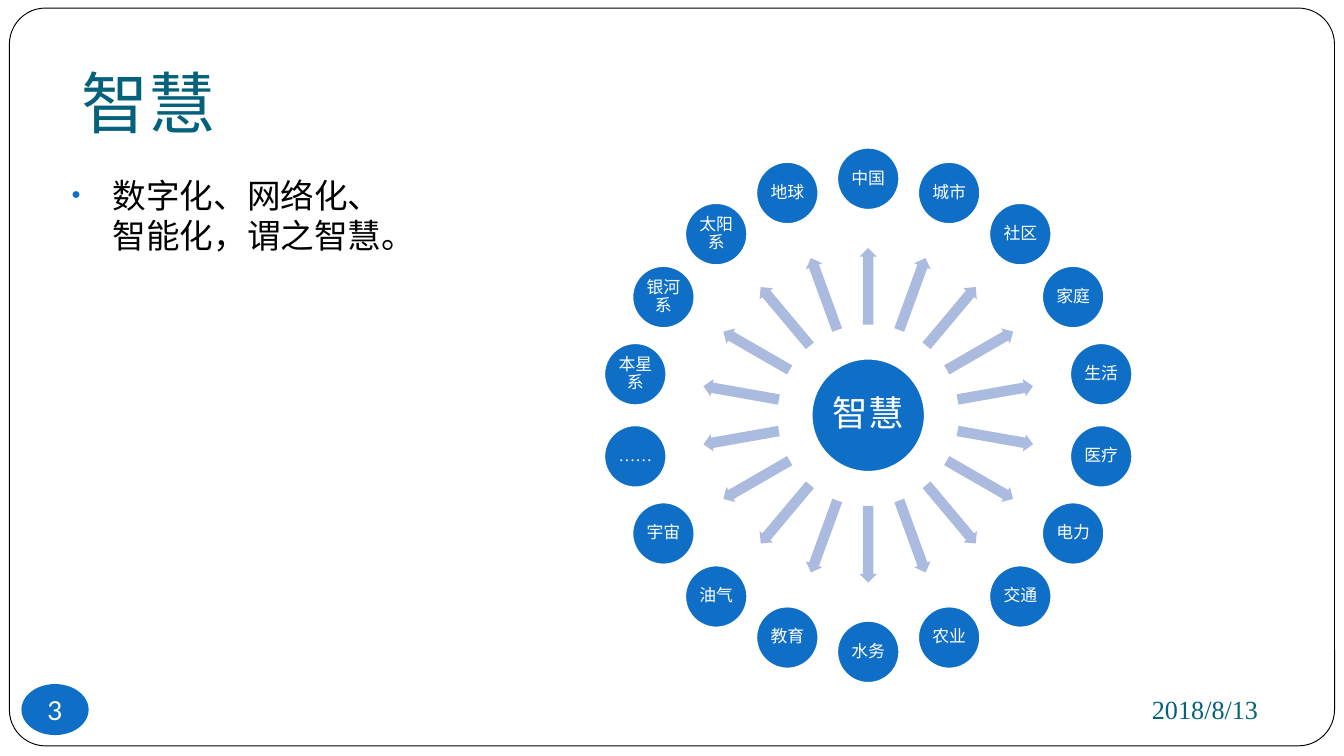
from math import cos, radians, sin

from lxml import etree
from pptx import Presentation
from pptx.dml.color import RGBColor
from pptx.enum.shapes import MSO_SHAPE
from pptx.enum.text import MSO_ANCHOR, PP_ALIGN
from pptx.oxml.ns import qn
from pptx.util import Inches, Pt

# Content
TITLE = "智慧"
STATEMENT = "数字化、网络化、智能化，谓之智慧。"
DATE = "2018/8/13"
PAGE_NUMBER = "3"
HUB = "智慧"
TOPICS = [  # clockwise from the top
    "中国", "城市", "社区", "家庭", "生活", "医疗", "电力", "交通", "农业",
    "水务", "教育", "油气", "宇宙", "……", "本星系", "银河系", "太阳系", "地球",
]

# Style
BLUE = RGBColor(0x0F, 0x6F, 0xC6)
PALE_BLUE = RGBColor(0xAB, 0xBB, 0xDF)
TEAL = RGBColor(0x04, 0x61, 0x7B)
BLACK = RGBColor(0, 0, 0)
WHITE = RGBColor(255, 255, 255)
SANS, SERIF = "Lato", "Times New Roman"
LEFT, CENTER, RIGHT = PP_ALIGN.LEFT, PP_ALIGN.CENTER, PP_ALIGN.RIGHT
TOP, MIDDLE, BOTTOM = MSO_ANCHOR.TOP, MSO_ANCHOR.MIDDLE, MSO_ANCHOR.BOTTOM
OVAL, ARROW = MSO_SHAPE.OVAL, MSO_SHAPE.RIGHT_ARROW
FRAME = MSO_SHAPE.ROUNDED_RECTANGLE

# Slide in 16:9 and radial diagram, in inches
SLIDE_WIDTH = 10
SLIDE_HEIGHT = SLIDE_WIDTH * 9 / 16
CENTER_X, CENTER_Y = 6.46, 3.09
HUB_SIZE, NODE_SIZE = 0.87, 0.49
ARROW_LENGTH, ARROW_WIDTH = 0.57, 0.13
NODE_RADIUS, ARROW_RADIUS = 1.76, 0.96

deck = Presentation()
deck.slide_width, deck.slide_height = Inches(SLIDE_WIDTH), Inches(SLIDE_HEIGHT)
page = deck.slides.add_slide(deck.slide_layouts[6])


def add_shape(kind, left, top, width, height, fill, line=None, line_width=0):
    shape = page.shapes.add_shape(
        kind, Inches(left), Inches(top), Inches(width), Inches(height))
    shape.shadow.inherit = False
    shape.fill.solid()
    shape.fill.fore_color.rgb = fill
    if line is None:
        shape.line.fill.background()
    else:
        shape.line.color.rgb = line
        shape.line.width = Pt(line_width)
    return shape


def write(shape, text, size, font, color, align=LEFT, anchor=TOP,
          insets=(0.1, 0.05, 0.1, 0.05), wrap=True):
    frame = shape.text_frame
    frame.word_wrap = wrap
    frame.vertical_anchor = anchor
    (frame.margin_left, frame.margin_top,
     frame.margin_right, frame.margin_bottom) = map(Inches, insets)
    para = frame.paragraphs[0]
    para.text = text
    para.alignment = align
    para.font.size = Pt(size)
    para.font.name = font
    para.font.color.rgb = color
    return para


def add_text(left, top, width, height, *args, **options):
    box = page.shapes.add_textbox(
        Inches(left), Inches(top), Inches(width), Inches(height))
    return write(box, *args, **options)


def add_bullet(para, indent):
    properties = para._p.get_or_add_pPr()
    properties.set("marL", str(Inches(indent)))
    properties.set("indent", str(-Inches(indent)))
    color = etree.Element(qn("a:buClr"))
    etree.SubElement(color, qn("a:srgbClr"), val=str(BLUE))
    size = etree.Element(qn("a:buSzPct"), val="85000")
    font = etree.Element(qn("a:buFont"), typeface=SERIF)
    mark = etree.Element(qn("a:buChar"), char="•")
    for position, part in enumerate((color, size, font, mark)):
        properties.insert(position, part)


def add_circle(center_x, center_y, size, text, text_size, inset):
    circle = add_shape(OVAL, center_x - size / 2, center_y - size / 2,
                       size, size, BLUE, WHITE, 3)
    para = write(circle, text, text_size, SERIF, WHITE, CENTER, MIDDLE,
                 (inset,) * 4)
    para.line_spacing = 0.9


def polar(radius, angle):
    return (CENTER_X + radius * cos(radians(angle)),
            CENTER_Y + radius * sin(radians(angle)))


# Page frame
border = add_shape(FRAME, 0.07, 0.06, 9.86, 5.49, WHITE, BLACK, 0.5)
border.adjustments[0] = 0.049

# Title and statement
add_text(0.51, 0.22, 8.99, 0.94, TITLE, 36, SANS, TEAL, anchor=BOTTOM,
         insets=(0.1, 0.05, 0.1, 0.1))
statement = add_text(0.43, 1.25, 2.68, 3.69, STATEMENT, 18, SERIF, BLACK)
add_bullet(statement, 0.31)

# Date and page number
add_text(6.75, 5.08, 2.71, 0.39, DATE, 14, SERIF, TEAL, RIGHT, MIDDLE)
badge = add_shape(OVAL, 0.16, 5.09, 0.5, 0.38, BLUE)
write(badge, PAGE_NUMBER, 14, SANS, WHITE, CENTER, MIDDLE, (0, 0, 0, 0), False)

# Hub with one arrow and one circle per topic
add_circle(CENTER_X, CENTER_Y, HUB_SIZE, HUB, 19, 0.03)
for index, topic in enumerate(TOPICS):
    angle = (270 + index * 360 / len(TOPICS)) % 360
    x, y = polar(ARROW_RADIUS, angle)
    arrow = add_shape(ARROW, x - ARROW_LENGTH / 2, y - ARROW_WIDTH / 2,
                      ARROW_LENGTH, ARROW_WIDTH, PALE_BLUE)
    arrow.adjustments[0] = 0.6
    arrow.adjustments[1] = 0.5
    arrow.rotation = angle
    add_circle(*polar(NODE_RADIUS, angle), NODE_SIZE, topic, 9, 0.01)

deck.save("out.pptx")
